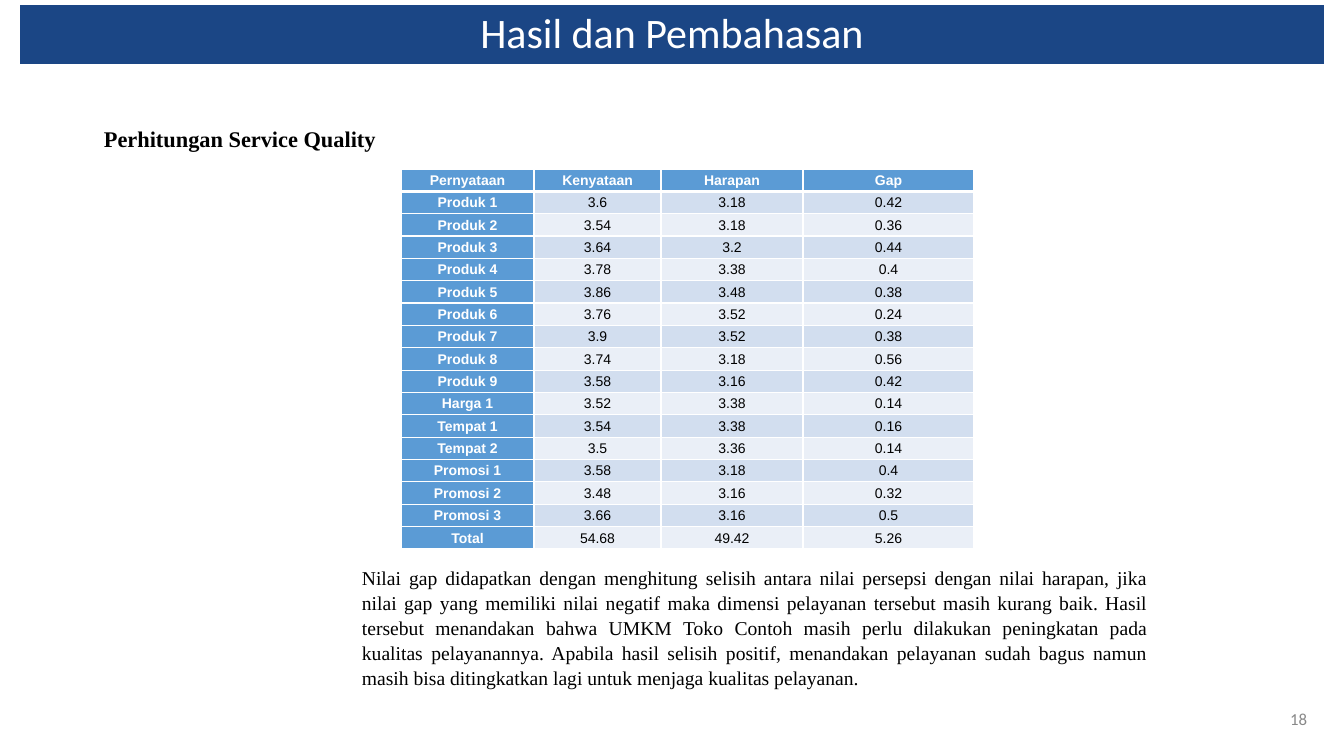
"""Builds the slide on service quality scores with a gap table."""
from lxml.etree import SubElement
from pptx import Presentation
from pptx.dml.color import RGBColor
from pptx.enum.shapes import MSO_SHAPE as Shape
from pptx.enum.text import MSO_ANCHOR as Anchor, PP_ALIGN as Align
from pptx.oxml.ns import qn
from pptx.util import Emu, Pt

TITLE = "Hasil dan Pembahasan"
HEADING = "Perhitungan Service Quality"
PAGE = "18"
BODY = (
    "Nilai gap didapatkan dengan menghitung selisih antara nilai persepsi dengan "
    "nilai harapan, jika nilai gap yang memiliki nilai negatif maka dimensi pelayanan "
    "tersebut masih kurang baik. Hasil tersebut menandakan bahwa UMKM Toko Contoh masih "
    "perlu dilakukan peningkatan pada kualitas pelayanannya. Apabila hasil selisih "
    "positif, menandakan pelayanan sudah bagus namun masih bisa ditingkatkan lagi untuk "
    "menjaga kualitas pelayanan."
)
SCORES = [
    ("Pernyataan", "Kenyataan", "Harapan", "Gap"),
    ("Produk 1", "3.6", "3.18", "0.42"),
    ("Produk 2", "3.54", "3.18", "0.36"),
    ("Produk 3", "3.64", "3.2", "0.44"),
    ("Produk 4", "3.78", "3.38", "0.4"),
    ("Produk 5", "3.86", "3.48", "0.38"),
    ("Produk 6", "3.76", "3.52", "0.24"),
    ("Produk 7", "3.9", "3.52", "0.38"),
    ("Produk 8", "3.74", "3.18", "0.56"),
    ("Produk 9", "3.58", "3.16", "0.42"),
    ("Harga 1", "3.52", "3.38", "0.14"),
    ("Tempat 1", "3.54", "3.38", "0.16"),
    ("Tempat 2", "3.5", "3.36", "0.14"),
    ("Promosi 1", "3.58", "3.18", "0.4"),
    ("Promosi 2", "3.48", "3.16", "0.32"),
    ("Promosi 3", "3.66", "3.16", "0.5"),
    ("Total", "54.68", "49.42", "5.26"),
]
COLORS = {
    "navy": "1B4685", "blue": "5B9BD5", "odd": "D2DEEF", "even": "EAEFF7",
    "white": "FFFFFF", "black": "000000", "gray": "888888",
}
WIDTHS = (133, 127, 142, 171)
TABLE_H = 380
SERIF = "Times New Roman"


def px(n):
    return Emu(round(n * 914400 / 100.8))


def rgb(name):
    return RGBColor.from_string(COLORS[name])


def put(frame, text, size, font, color="black", bold=False,
        align=Align.JUSTIFY, spacing=1.07, after=8, anchor=Anchor.TOP):
    frame.word_wrap = True
    frame.vertical_anchor = anchor
    para = frame.paragraphs[0]
    para.alignment = align
    para.line_spacing = spacing
    para.space_after = Pt(after)
    run = para.add_run()
    run.text = text
    run.font.size = Pt(size)
    run.font.name = font
    run.font.bold = bold
    run.font.color.rgb = rgb(color)


def box(slide, place, text, **style):
    shape = slide.shapes.add_textbox(*map(px, place))
    put(shape.text_frame, text, **style)


def edge(cell, row):
    props = cell._tc.get_or_add_tcPr()
    for i, side in enumerate("LRTB"):
        thick = (row, side) in ((0, "B"), (1, "T"))
        line = SubElement(props, qn(f"a:ln{side}"), w=str(Pt(3 if thick else 1)))
        fill = SubElement(line, qn("a:solidFill"))
        SubElement(fill, qn("a:srgbClr"), val=COLORS["white"])
        props.insert(i, line)


def grid(slide):
    rows = len(SCORES)
    frame = slide.shapes.add_table(rows, len(WIDTHS), px(401), px(169),
                                   px(sum(WIDTHS)), px(TABLE_H))
    table = frame.table
    table.first_col = True
    for col, width in zip(table.columns, WIDTHS):
        col.width = px(width)
    for r, values in enumerate(SCORES):
        table.rows[r].height = px(TABLE_H / rows)
        for c, text in enumerate(values):
            cell = table.cell(r, c)
            head = r == 0 or c == 0
            cell.margin_left = cell.margin_right = px(7)
            cell.margin_top = cell.margin_bottom = 0
            cell.vertical_anchor = Anchor.MIDDLE
            cell.fill.solid()
            cell.fill.fore_color.rgb = rgb("blue" if head else "odd" if r % 2 else "even")
            edge(cell, r)
            put(cell.text_frame, text, 10, "Arial", "white" if head else "black",
                head, Align.CENTER, anchor=Anchor.MIDDLE)


def main():
    deck = Presentation()
    deck.slide_width, deck.slide_height = px(1344), px(756)
    slide = deck.slides.add_slide(deck.slide_layouts[6])
    bar = slide.shapes.add_shape(Shape.RECTANGLE, *map(px, (20, 5, 1304, 59)))
    bar.shadow.inherit = False
    bar.fill.solid()
    bar.fill.fore_color.rgb = rgb("navy")
    bar.line.fill.background()
    put(bar.text_frame, TITLE, 30, "Calibri", "white", align=Align.CENTER,
        spacing=0.9, after=0, anchor=Anchor.MIDDLE)
    box(slide, (94, 118, 672, 37), HEADING, size=16, font=SERIF, bold=True)
    grid(slide)
    box(slide, (352, 559, 806, 136), BODY, size=14, font=SERIF)
    box(slide, (1260, 699, 57, 40), PAGE, size=12, font="Calibri", color="gray",
        align=Align.RIGHT, spacing=1.0, after=0, anchor=Anchor.MIDDLE)
    deck.save("out.pptx")


if __name__ == "__main__":
    main()
